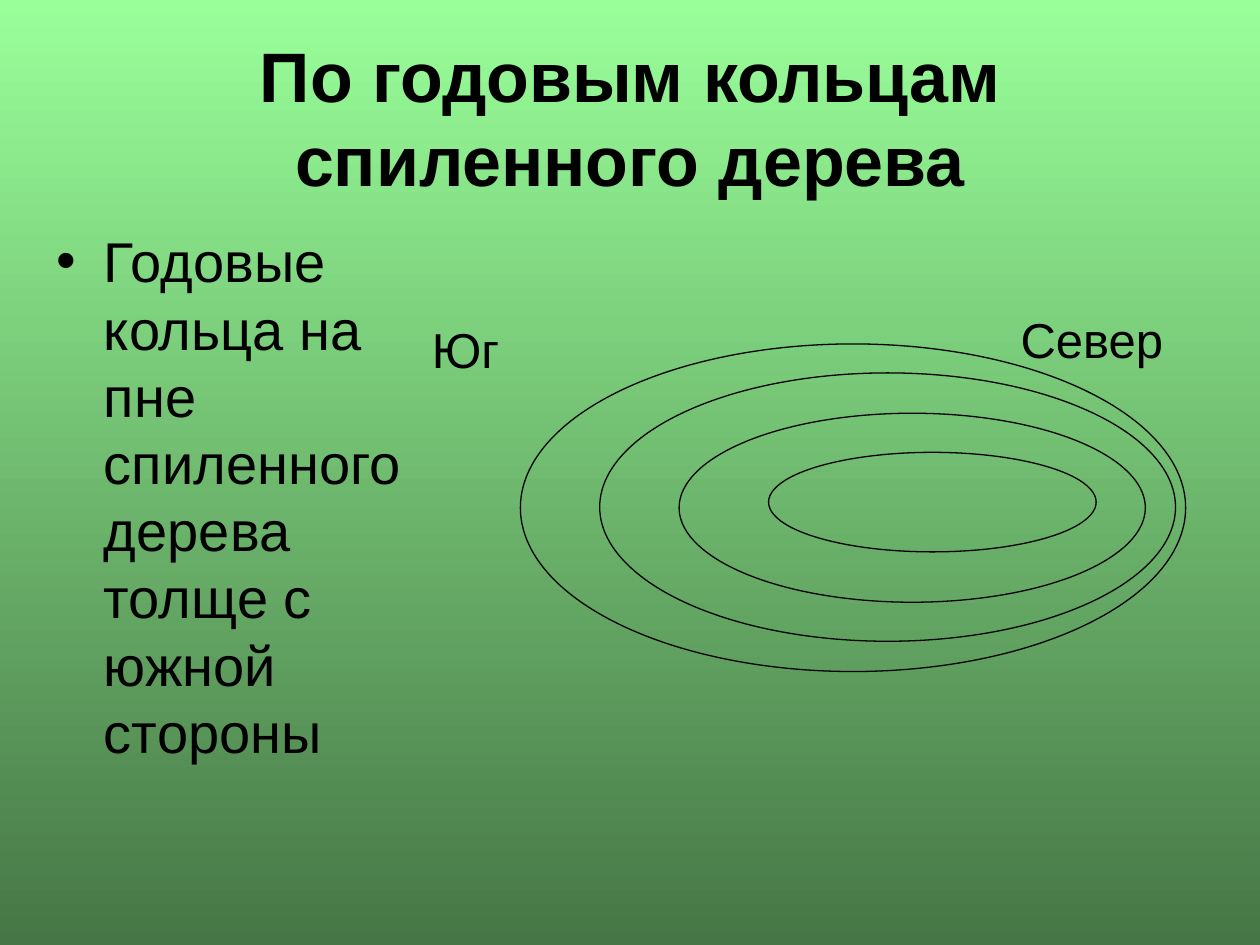
from pptx import Presentation
from pptx.dml.color import RGBColor
from pptx.enum.shapes import MSO_SHAPE as Shape
from pptx.enum.text import MSO_ANCHOR as Anchor, MSO_AUTO_SIZE as AutoSize, PP_ALIGN as Align
from pptx.util import Inches, Pt

BLACK = RGBColor(0x00, 0x00, 0x00)
LIGHT_GREEN = RGBColor(0x99, 0xFF, 0x99)
DARK_GREEN = RGBColor(0x46, 0x76, 0x46)


def place(box, left, top, width, height):
    box.left, box.top = Inches(left), Inches(top)
    box.width, box.height = Inches(width), Inches(height)


def write(box, text, size, align, bold=False):
    box.text_frame.word_wrap = True
    para = box.text_frame.paragraphs[0]
    para.text = text
    para.alignment = align
    para.space_before = Pt(0)
    para.font.name = "Arial"
    para.font.size = Pt(size)
    para.font.bold = bold
    para.font.color.rgb = BLACK


deck = Presentation()
deck.slide_width, deck.slide_height = Inches(10), Inches(7.5)
page = deck.slides.add_slide(deck.slide_layouts[1])

# Background: light at the top, dark at the bottom
backdrop = page.background.fill
backdrop.gradient()
backdrop.gradient_angle = 270
for stop, color in zip(backdrop.gradient_stops, (LIGHT_GREEN, DARK_GREEN)):
    stop.color.rgb = color

# Title and list
title, body = page.placeholders
place(title, 0.5, 0.3, 9, 1.25)
write(title, "По годовым кольцам спиленного дерева", 40, Align.CENTER, bold=True)
title.text_frame.vertical_anchor = Anchor.MIDDLE
place(body, 0.35, 1.75, 2.99, 4.95)
write(body, "Годовые кольца на пне спиленного дерева толще с южной стороны", 32, Align.LEFT)
for box in (title, body):
    box.text_frame.auto_size = AutoSize.NONE

# Tree rings, wider apart on the southern side
rings = [
    (5.39, 3.28, 3.7, 1.5),
    (6.1, 3.59, 2.6, 0.79),
    (4.76, 2.96, 4.57, 2.13),
    (4.13, 2.73, 5.28, 2.6),
]
for bounds in rings:
    ring = page.shapes.add_shape(Shape.OVAL, *map(Inches, bounds))
    ring.shadow.inherit = False
    ring.fill.background()
    ring.line.color.rgb = BLACK
    ring.line.width = Pt(0.75)

# Compass labels
for text, left, top, width in [("Юг", 3.03, 2.49, 1.33), ("Север", 7.84, 2.41, 1.65)]:
    label = page.shapes.add_textbox(*map(Inches, (left, top, width, 0.57)))
    write(label, text, 28, Align.CENTER)
    label.text_frame.auto_size = AutoSize.SHAPE_TO_FIT_TEXT

deck.save("out.pptx")
